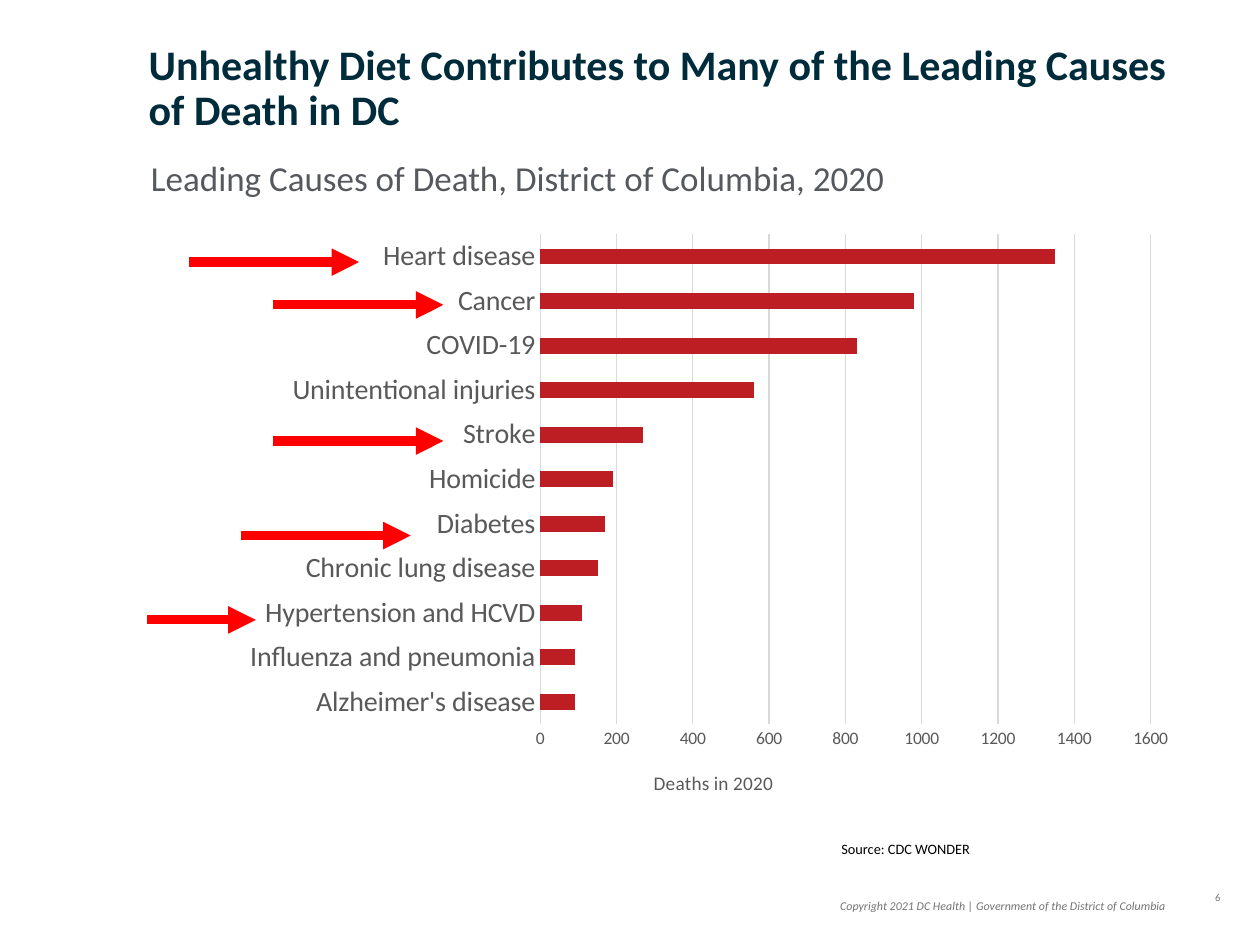
from lxml import etree
from pptx import Presentation
from pptx.chart.data import CategoryChartData
from pptx.dml.color import RGBColor
from pptx.enum import chart as ch, shapes, text
from pptx.oxml import parse_xml
from pptx.oxml.ns import nsdecls, qn
from pptx.util import Inches, Pt

FONT = "Calibri"
GREY = "595959"
GRID = "D9D9D9"
LEFT, CENTER, RIGHT = text.PP_ALIGN.LEFT, text.PP_ALIGN.CENTER, text.PP_ALIGN.RIGHT
TOP, MIDDLE = text.MSO_ANCHOR.TOP, text.MSO_ANCHOR.MIDDLE

TEXTS = [
    dict(words="Unhealthy Diet Contributes to Many of the Leading Causes of Death in DC",
         at=(1.11, 0.31, 8.32, 0.84), size=24, color="002B3A", bold=True, spacing=0.9,
         insets=(0.07, 0.04)),
    dict(words="Leading Causes of Death, District of Columbia, 2020",
         at=(1.1, 1.23, 7.8, 0.43), size=20, color="55595D", spacing=0.9),
    dict(words="Source: CDC WONDER", at=(6.58, 6.62, 2.2, 0.24), size=8.2, color="000000"),
    dict(words="Copyright 2021 DC Health | Government of the District of Columbia",
         at=(5.27, 7, 4.08, 0.37), size=6.8, color="747476", italic=True,
         align=RIGHT, anchor=MIDDLE),
    dict(words="6", at=(9.38, 6.92, 0.57, 0.4), size=6, color="747476",
         align=CENTER, anchor=MIDDLE),
]

DEATHS = [
    ("Heart disease", 1350), ("Cancer", 980), ("COVID-19", 830),
    ("Unintentional injuries", 560), ("Stroke", 270), ("Homicide", 190),
    ("Diabetes", 170), ("Chronic lung disease", 150), ("Hypertension and HCVD", 110),
    ("Influenza and pneumonia", 90), ("Alzheimer's disease", 90),
]
CHART_AT = (1.84, 1.77, 7.58, 4.72)
PLOT_AT = (4.29, 1.86, 4.84, 3.89)
AXIS_TITLE_AT = (5.16, 6.08)

ARROWS = [(1.5, 2.08, 1.35), (2.17, 2.42, 1.35), (2.17, 3.5, 1.35),
          (1.91, 4.25, 1.35), (1.17, 4.92, 0.86)]


def rgb(color):
    return RGBColor.from_string(color)


def style(font, size, color, bold=False, italic=False):
    font.name, font.size, font.bold, font.italic = FONT, Pt(size), bold, italic
    font.color.rgb = rgb(color)


def add_text(s, words, at, size, color, bold=False, italic=False, align=LEFT,
             anchor=TOP, spacing=1.0, insets=(0.1, 0.05)):
    tf = s.shapes.add_textbox(*map(Inches, at)).text_frame
    tf.word_wrap = True
    tf.vertical_anchor = anchor
    tf.margin_left = tf.margin_right = Inches(insets[0])
    tf.margin_top = tf.margin_bottom = Inches(insets[1])
    tf.text = words
    p = tf.paragraphs[0]
    p.alignment, p.line_spacing = align, spacing
    style(p.runs[0].font, size, color, bold, italic)


def layout_xml(place, inner=False):
    fractions = [(v - CHART_AT[i] * (i < 2)) / CHART_AT[2 + i % 2]
                 for i, v in enumerate(place)]
    target = '<c:layoutTarget val="inner"/>' if inner else ""
    modes = '<c:xMode val="edge"/><c:yMode val="edge"/>'
    values = "".join(f'<c:{k} val="{v:.3f}"/>' for k, v in zip("xywh", fractions))
    return parse_xml(f'<c:layout {nsdecls("c")}><c:manualLayout>{target}{modes}{values}'
                     '</c:manualLayout></c:layout>')


def place_part(element, place, inner=False):
    for old in element.findall(qn("c:layout")):
        element.remove(old)
    tx = element.find(qn("c:tx"))
    element.insert(0 if tx is None else 1, layout_xml(place, inner))


def add_deaths_chart(s):
    data = CategoryChartData()
    causes, counts = zip(*reversed(DEATHS))
    data.categories = causes
    data.add_series("Series 1", counts)
    chart = s.shapes.add_chart(ch.XL_CHART_TYPE.BAR_CLUSTERED,
                               *map(Inches, CHART_AT), data).chart
    chart.has_legend = chart.has_title = False
    style(chart.font, 10, "000000")
    plot = chart.plots[0]
    plot.gap_width, plot.vary_by_categories = 182, False
    fill = plot.series[0].format.fill
    fill.solid()
    fill.fore_color.rgb = rgb("BD1E24")

    cats, vals = chart.category_axis, chart.value_axis
    for axis, size in ((cats, 16), (vals, 10)):
        axis.major_tick_mark = axis.minor_tick_mark = ch.XL_TICK_MARK.NONE
        style(axis.tick_labels.font, size, GREY)
    vals.has_major_gridlines = True
    for line in (cats.format.line, vals.major_gridlines.format.line):
        line.color.rgb, line.width = rgb(GRID), Pt(0.75)
    vals.format.line.fill.background()
    vals.minimum_scale, vals.maximum_scale, vals.major_unit = 0, 1600, 200

    title = vals.axis_title
    title.text_frame.text = "Deaths in 2020"
    style(title.text_frame.paragraphs[0].runs[0].font, 11, GREY)
    place_part(title._element, AXIS_TITLE_AT)
    place_part(chart._chartSpace.chart.plotArea, PLOT_AT, inner=True)


def add_arrow(s, left, y, length):
    arrow = s.shapes.add_connector(shapes.MSO_CONNECTOR.STRAIGHT, Inches(left), Inches(y),
                                   Inches(left + length), Inches(y))
    arrow.line.color.rgb, arrow.line.width = rgb("FF0000"), Pt(5.25)
    etree.SubElement(arrow.line._get_or_add_ln(), qn("a:tailEnd"), type="triangle")
    etree.SubElement(arrow._element.spPr, qn("a:effectLst"))


def main():
    prs = Presentation()
    prs.slide_width, prs.slide_height = Inches(10), Inches(7.5)
    s = prs.slides.add_slide(prs.slide_layouts[6])
    add_deaths_chart(s)
    for item in TEXTS:
        add_text(s, **item)
    for arrow in ARROWS:
        add_arrow(s, *arrow)
    prs.save("out.pptx")


if __name__ == "__main__":
    main()
